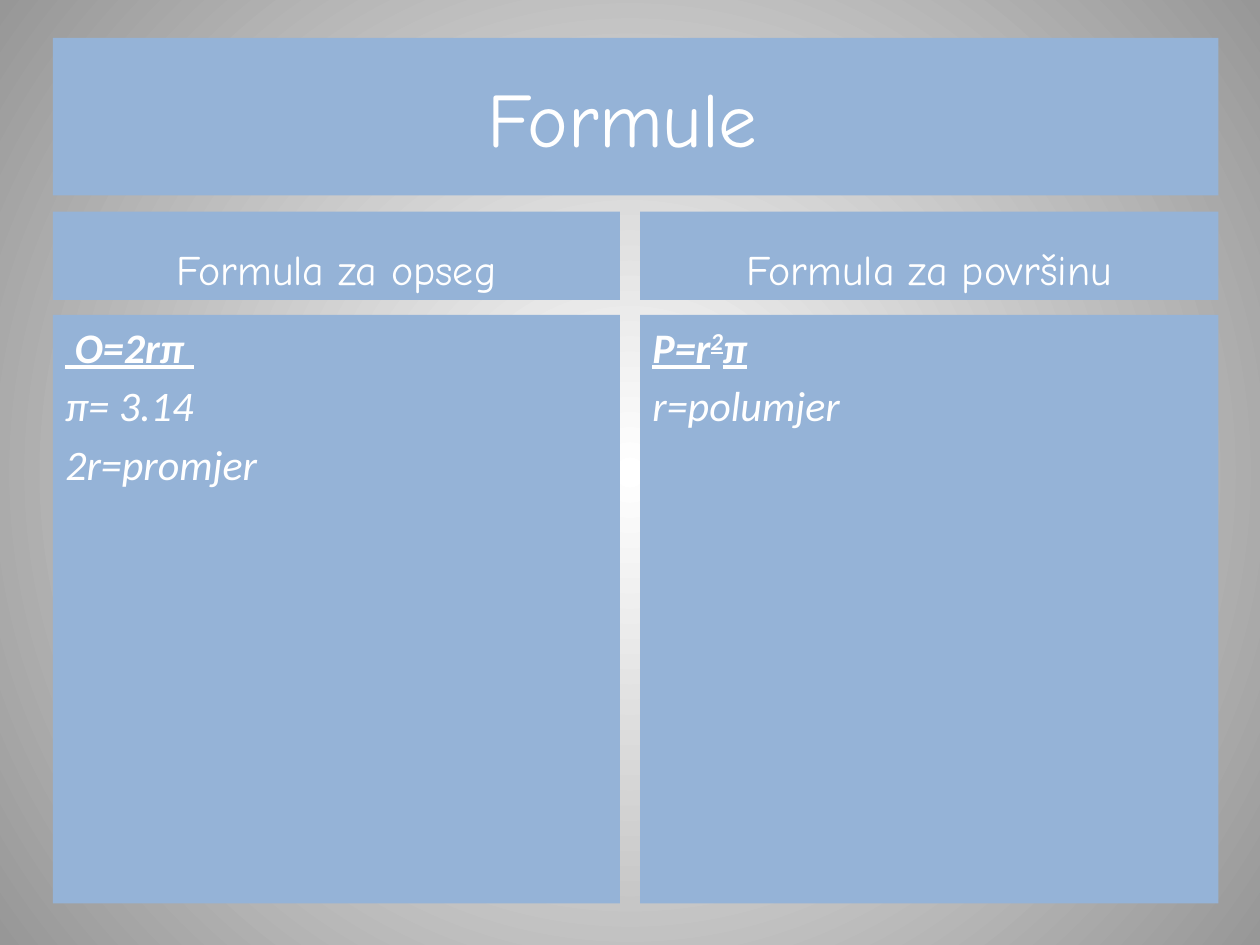
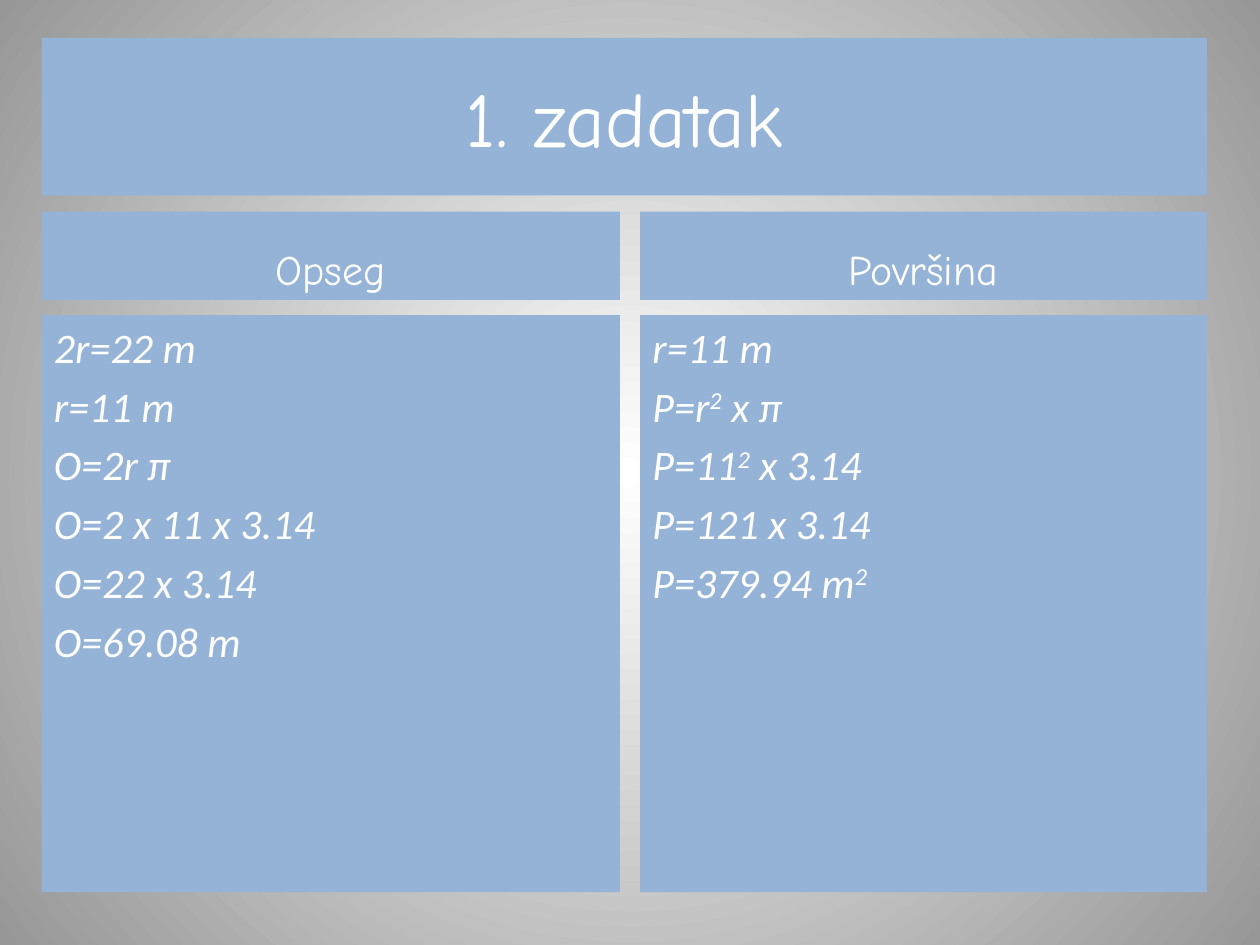
from lxml import etree
from pptx import Presentation
from pptx.dml import color
from pptx.enum import shapes, text
from pptx.oxml import ns
from pptx.util import Inches, Pt

PANEL, INK = "95B3D7", "FFFFFF"
GLOW, EDGE = "FFFFFF", "979797"
HEADING_FONT, BODY_FONT = "Comic Neue", "Calibri"
COLUMN_GAP_LEFT, COLUMN_GAP_RIGHT = 4.92, 5.08
TITLE = {"name": HEADING_FONT, "size": Pt(44)}
HEADING = {"name": HEADING_FONT, "size": Pt(24)}
FORMULA = {"name": BODY_FONT, "size": Pt(24), "italic": True}
KEY_FORMULA = {**FORMULA, "bold": True, "underline": True}


def rgb(value):
    return color.RGBColor.from_string(value)


def set_background(page):
    """Fill the page with a circular gradient that is brightest in the centre."""
    fill = page.background.fill
    fill.gradient()
    for stop, position, value in zip(fill.gradient_stops, (0, 1), (GLOW, EDGE)):
        stop.position = position
        stop.color.rgb = rgb(value)
    gradient = next(page._element.iter(ns.qn("a:gradFill")))
    gradient.remove(gradient.find(ns.qn("a:lin")))
    circle = etree.SubElement(gradient, ns.qn("a:path"), path="circle")
    centre = dict.fromkeys("ltrb", "50000")
    etree.SubElement(circle, ns.qn("a:fillToRect"), centre)


def add_panel(page, left, top, width, height, anchor):
    box = page.shapes.add_shape(shapes.MSO_SHAPE.RECTANGLE, Inches(left),
                                Inches(top), Inches(width), Inches(height))
    box.shadow.inherit = False
    box.fill.solid()
    box.fill.fore_color.rgb = rgb(PANEL)
    box.line.fill.background()
    box.text_frame.word_wrap = True
    box.text_frame.vertical_anchor = anchor
    return box.text_frame


def write(para, wording, style, align=text.PP_ALIGN.CENTER):
    """Write a paragraph; the pieces between bars are superscript."""
    para.alignment = align
    for index, piece in enumerate(wording.split("|")):
        if not piece:
            continue
        span = para.add_run()
        span.text = piece
        span.font.color.rgb = rgb(INK)
        for name, value in style.items():
            setattr(span.font, name, value)
        if index % 2:
            span._r.get_or_add_rPr().set("baseline", "30000")


def space_as_body(para):
    """Put a fifth of a line before the paragraph and give it a hanging indent."""
    props = para._p.get_or_add_pPr()
    props.set("marL", str(Inches(0.38)))
    props.set("indent", str(-Inches(0.38)))
    before = etree.SubElement(props, ns.qn("a:spcBef"))
    etree.SubElement(before, ns.qn("a:spcPct"), val="20000")


def add_column(page, left, width, height, heading, lines):
    frame = add_panel(page, left, 1.68, width, 0.7, text.MSO_ANCHOR.BOTTOM)
    write(frame.paragraphs[0], heading, HEADING)
    frame = add_panel(page, left, 2.5, width, height, text.MSO_ANCHOR.TOP)
    for index, (wording, style) in enumerate(lines):
        para = frame.add_paragraph() if index else frame.paragraphs[0]
        write(para, wording, style, text.PP_ALIGN.LEFT)
        space_as_body(para)


def add_comparison(deck, title, left, height, columns):
    """Add a page with a title band above two headed columns."""
    page = deck.slides.add_slide(deck.slide_layouts[6])
    set_background(page)
    width = 9.25
    frame = add_panel(page, left, 0.3, width, 1.25, text.MSO_ANCHOR.MIDDLE)
    write(frame.paragraphs[0], title, TITLE)
    spans = [(left, COLUMN_GAP_LEFT), (COLUMN_GAP_RIGHT, left + width)]
    for (start, end), (heading, lines) in zip(spans, columns):
        add_column(page, start, end - start, height, heading, lines)


def plain(*wordings):
    return [(wording, FORMULA) for wording in wordings]


def main():
    deck = Presentation()
    deck.slide_width, deck.slide_height = Inches(10), Inches(7.5)
    add_comparison(deck, "Formule ", 0.42, 4.67, [
        ("Formula za opseg",
         [(" O=2rπ ", KEY_FORMULA), *plain("π= 3.14", "2r=promjer")]),
        ("Formula za površinu",
         [("P=r|2|π", KEY_FORMULA), *plain("r=polumjer")]),
    ])
    add_comparison(deck, "1. zadatak", 0.33, 4.58, [
        ("Opseg", plain("2r=22 m", "r=11 m", "O=2r π", "O=2 x 11 x 3.14",
                        "O=22 x 3.14", "O=69.08 m")),
        ("Površina", plain("r=11 m", "P=r|2| x π", "P=11|2| x 3.14",
                           "P=121 x 3.14", "P=379.94 m|2|")),
    ])
    deck.save("out.pptx")


if __name__ == "__main__":
    main()
